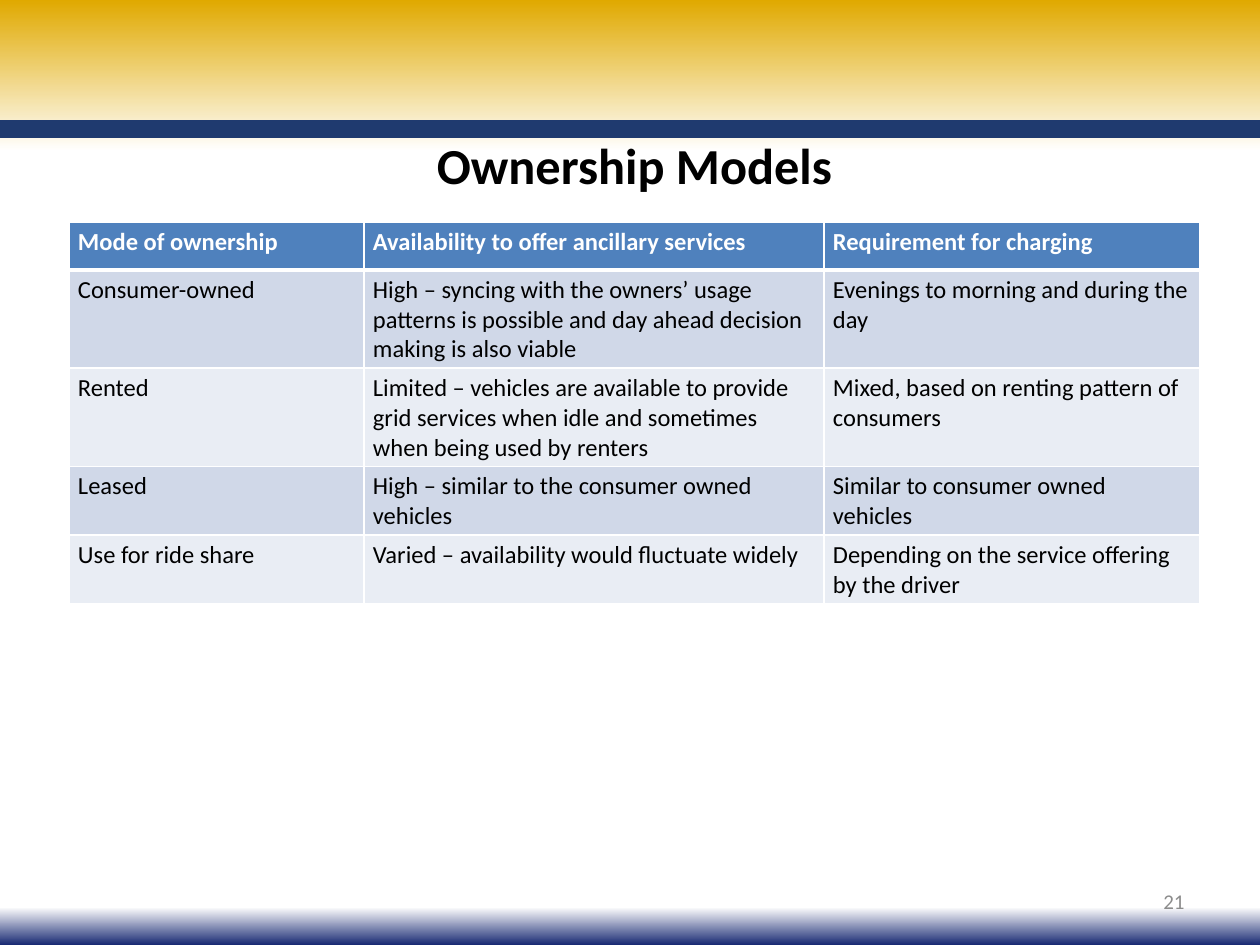
from lxml import etree
from pptx import Presentation, util as u
from pptx.dml.color import RGBColor
from pptx.enum import shapes, text
from pptx.oxml.ns import qn

# Content
TITLE = "Ownership Models"
PAGE_NUMBER = "21"
OWNERSHIP = [
    ("Mode of ownership", "Availability to offer ancillary services",
     "Requirement for charging"),
    ("Consumer-owned",
     "High – syncing with the owners’ usage patterns is possible and day ahead "
     "decision making is also viable",
     "Evenings to morning and during the day"),
    ("Rented",
     "Limited – vehicles are available to provide grid services when idle and "
     "sometimes when being used by renters",
     "Mixed, based on renting pattern of consumers"),
    ("Leased", "High – similar to the consumer owned vehicles",
     "Similar to consumer owned vehicles"),
    ("Use for ride share", "Varied – availability would fluctuate widely",
     "Depending on the service offering by the driver"),
]

# Look
FONT = "Calibri"
GOLD = RGBColor(0xE0, 0xA9, 0x00)
NAVY = RGBColor(0x18, 0x29, 0x72)
BAR_BLUE = RGBColor(0x1F, 0x3A, 0x6F)
HEADER_BLUE = RGBColor(0x4F, 0x81, 0xBD)
BANDS = RGBColor(0xD0, 0xD8, 0xE8), RGBColor(0xE9, 0xED, 0xF4)
BLACK = RGBColor(0, 0, 0)
WHITE = RGBColor(0xFF, 0xFF, 0xFF)
GREY = RGBColor(0x8C, 0x8C, 0x8C)
BACKDROP = [(0, GOLD), (16, WHITE), (96, WHITE), (100, NAVY)]

# Layout in px
SLIDE_W, SLIDE_H = 1260, 945
COLUMNS = [295, 460, 376]
ROWS = [48, 94, 94, 67, 67]
TABLE_LEFT, TABLE_TOP = 69, 222
CELL_PAD_X, CELL_PAD_Y = 9, 5


def px(n):
    return u.Emu(n * 914400 // 126)


def write(frame, words, size, color, bold=False, align=text.PP_ALIGN.LEFT):
    paragraph = frame.paragraphs[0]
    paragraph.alignment = align
    run = paragraph.add_run()
    run.text = words
    run.font.name, run.font.size, run.font.bold = FONT, u.Pt(size), bold
    run.font.color.rgb = color


def add_label(slide, box, words, size, color, align, bold=False):
    frame = slide.shapes.add_textbox(*map(px, box)).text_frame
    frame.word_wrap = True
    frame.vertical_anchor = text.MSO_ANCHOR.MIDDLE
    write(frame, words, size, color, bold, align)


def set_backdrop(slide):
    fill = slide.background.fill
    fill.gradient()
    fill.gradient_angle = 270
    stops = next(slide.element.iter(qn("a:gsLst")))
    for stop in list(stops):
        stops.remove(stop)
    for percent, color in BACKDROP:
        stop = etree.SubElement(stops, qn("a:gs"), pos=str(percent * 1000))
        etree.SubElement(stop, qn("a:srgbClr"), val=str(color))


def set_borders(cell, bottom):
    props = cell._tc.get_or_add_tcPr()
    widths = {"lnL": 1, "lnR": 1, "lnT": 1, "lnB": bottom}
    for i, (side, width) in enumerate(widths.items()):
        line = etree.Element(qn(f"a:{side}"), w=str(u.Pt(width)))
        solid = etree.SubElement(line, qn("a:solidFill"))
        etree.SubElement(solid, qn("a:srgbClr"), val=str(WHITE))
        props.insert(i, line)


def add_ownership_table(slide):
    table = slide.shapes.add_table(
        len(ROWS), len(COLUMNS), px(TABLE_LEFT), px(TABLE_TOP),
        px(sum(COLUMNS)), px(sum(ROWS))).table
    for column, width in zip(table.columns, COLUMNS):
        column.width = px(width)
    for r, (row, height, entries) in enumerate(zip(table.rows, ROWS, OWNERSHIP)):
        row.height = px(height)
        header = r == 0
        for cell, words in zip(row.cells, entries):
            cell.margin_left = cell.margin_right = px(CELL_PAD_X)
            cell.margin_top = cell.margin_bottom = px(CELL_PAD_Y)
            cell.fill.solid()
            cell.fill.fore_color.rgb = HEADER_BLUE if header else BANDS[(r - 1) % 2]
            set_borders(cell, bottom=3 if header or r == 0 else 1)
            write(cell.text_frame, words, 14, WHITE if header else BLACK, header)


def main():
    deck = Presentation()
    deck.slide_width, deck.slide_height = px(SLIDE_W), px(SLIDE_H)
    slide = deck.slides.add_slide(deck.slide_layouts[6])
    set_backdrop(slide)

    # Bar under the gold header
    bar = slide.shapes.add_shape(
        shapes.MSO_SHAPE.RECTANGLE, px(0), px(122), px(SLIDE_W), px(14))
    bar.shadow.inherit = False
    bar.fill.solid()
    bar.fill.fore_color.rgb = bar.line.color.rgb = BAR_BLUE
    bar.line.width = u.Pt(2)

    # Title, table and page number
    add_label(slide, (273, 126, 723, 76), TITLE, 28.8, BLACK,
              text.PP_ALIGN.CENTER, bold=True)
    add_ownership_table(slide)
    add_label(slide, (903, 876, 294, 50), PAGE_NUMBER, 12, GREY,
              text.PP_ALIGN.RIGHT)
    deck.save("out.pptx")


if __name__ == "__main__":
    main()
